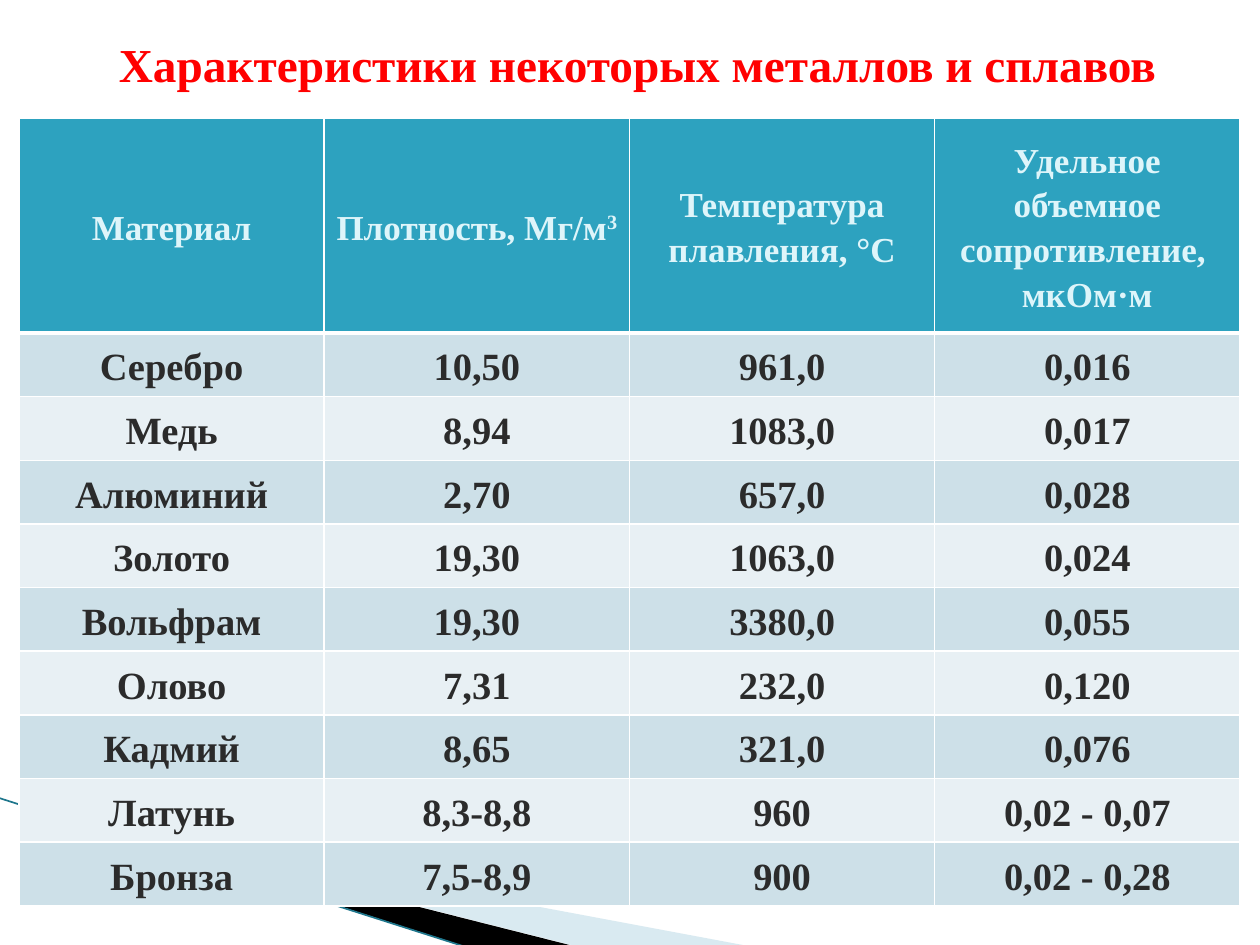
"""Build a slide with a table of the properties of some metals and alloys."""
from lxml.etree import SubElement
from pptx import Presentation
from pptx.dml.color import RGBColor
from pptx.enum.shapes import MSO_CONNECTOR
from pptx.enum.text import MSO_ANCHOR, PP_ALIGN
from pptx.oxml.ns import qn
from pptx.util import Emu, Pt

PX = 914400 / 126
FONT = "Times New Roman"
COLORS = {
    "title": "FF0000", "header": "2DA2BF", "header_text": "DEF5FA",
    "odd": "CDE0E8", "even": "E8F0F4", "text": "2B2B2B",
    "border": "FFFFFF", "pale": "A0CBDC", "dark": "000000", "edge": "1E768C",
}
TITLE = "Характеристики некоторых металлов и сплавов"
HEADERS = [
    "Материал",
    "Плотность, Мг/м",
    "Температура\vплавления, °C",
    "Удельное объемное\vсопротивление, \nмкОм·м",
]
DENSITY_COLUMN, DENSITY_POWER = 1, "3"
MATERIALS = [
    ("Серебро", "10,50", "961,0", "0,016"),
    ("Медь", "8,94", "1083,0", "0,017"),
    ("Алюминий", "2,70", "657,0", "0,028"),
    ("Золото", "19,30", "1063,0", "0,024"),
    ("Вольфрам", "19,30", "3380,0", "0,055"),
    ("Олово", "7,31", "232,0", "0,120"),
    ("Кадмий", "8,65", "321,0", "0,076"),
    ("Латунь", "8,3-8,8", "960", "0,02 - 0,07"),
    ("Бронза", "7,5-8,9", "900", "0,02 - 0,28"),
]
WEDGES = [
    ("pale", 40, (98, 689, 524, 199), [(69, 819), (748, 946), (575, 946), (69, 818)]),
    ("dark", 100, (-8, 798, 524, 116), [(67, 818), (573, 946), (470, 948), (68, 819)]),
]
EDGE = (-1, 798, 469, 948)
TITLE_BOX = (20, 29, 1220, 886)
TABLE_BOX = (19, 118, 1221, 788)
HEADER_HEIGHT = 215


def px(value):
    return Emu(round(value * PX))


def rgb(name):
    return RGBColor.from_string(COLORS[name])


def style_font(font, size, color):
    font.name, font.size, font.bold = FONT, Pt(size), True
    font.color.rgb = rgb(color)


def set_frame(wedge, frame):
    left, top, width, height = map(px, frame)
    shift_x, shift_y = wedge.left - left, wedge.top - top
    for outline in wedge._element.iter(qn("a:path")):
        outline.set("w", str(width))
        outline.set("h", str(height))
        for point in outline.iter(qn("a:pt")):
            point.set("x", str(int(point.get("x")) + shift_x))
            point.set("y", str(int(point.get("y")) + shift_y))
    wedge.left, wedge.top, wedge.width, wedge.height = left, top, width, height


def add_wedge(slide, color, opacity, frame, points):
    corners = [(px(x), px(y)) for x, y in points]
    builder = slide.shapes.build_freeform(*corners[0])
    builder.add_line_segments(corners[1:], close=True)
    wedge = builder.convert_to_shape()
    set_frame(wedge, frame)
    wedge.shadow.inherit = False
    wedge.fill.solid()
    wedge.fill.fore_color.rgb = rgb(color)
    wedge.line.fill.background()
    if opacity < 100:
        tint = wedge.fill._xPr.find(f"{qn('a:solidFill')}/{qn('a:srgbClr')}")
        SubElement(tint, qn("a:alpha"), val=str(opacity * 1000))


def add_edge(slide):
    edge = slide.shapes.add_connector(MSO_CONNECTOR.STRAIGHT, *map(px, EDGE))
    edge.line.color.rgb = rgb("edge")
    edge.line.width = Pt(0.95)
    SubElement(edge._element.spPr, qn("a:effectLst"))


def add_title(slide):
    frame = slide.shapes.add_textbox(*map(px, TITLE_BOX)).text_frame
    frame.word_wrap = True
    frame.margin_top = px(6)
    frame.text = TITLE
    heading = frame.paragraphs[0]
    heading.alignment = PP_ALIGN.CENTER
    properties = heading._p.get_or_add_pPr()
    properties.set("marL", str(px(50)))
    properties.set("indent", str(px(-35)))
    style_font(heading.runs[0].font, 27, "title")


def set_borders(cell, widths):
    for side, width in widths.items():
        border = SubElement(cell._tc.get_or_add_tcPr(), qn(f"a:ln{side}"), w=str(Pt(width)))
        SubElement(SubElement(border, qn("a:solidFill")), qn("a:srgbClr"), val=COLORS["border"])


def fill_cell(cell, text, row):
    is_header = row == 0
    set_borders(cell, {"L": 1, "R": 1, "T": 3 if row == 1 else 1, "B": 3 if is_header else 1})
    cell.fill.solid()
    cell.fill.fore_color.rgb = rgb("header" if is_header else "odd" if row % 2 else "even")
    cell.vertical_anchor = MSO_ANCHOR.MIDDLE
    cell.margin_left = cell.margin_right = cell.margin_top = cell.margin_bottom = px(2)
    cell.text_frame.text = text
    lines = cell.text_frame.paragraphs
    for line in lines:
        line.alignment = PP_ALIGN.CENTER
        line.line_spacing = 1.15
        line.space_after = Pt(10 if len(lines) == 1 else 0)
        for run in line.runs:
            style_font(run.font, 20 if is_header else 22, "header_text" if is_header else "text")


def add_materials(slide):
    rows = [HEADERS, *MATERIALS]
    table = slide.shapes.add_table(len(rows), len(HEADERS), *map(px, TABLE_BOX)).table
    body_height = (TABLE_BOX[3] - HEADER_HEIGHT) / len(MATERIALS)
    for column in table.columns:
        column.width = px(TABLE_BOX[2] / len(HEADERS))
    for r, values in enumerate(rows):
        table.rows[r].height = px(body_height if r else HEADER_HEIGHT)
        for c, value in enumerate(values):
            fill_cell(table.cell(r, c), value, r)
    power = table.cell(0, DENSITY_COLUMN).text_frame.paragraphs[0].add_run()
    power.text = DENSITY_POWER
    style_font(power.font, 20, "header_text")
    power.font._element.set("baseline", "30000")


def main():
    deck = Presentation()
    deck.slide_width, deck.slide_height = px(1260), px(945)
    slide = deck.slides.add_slide(deck.slide_layouts[6])
    for wedge in WEDGES:
        add_wedge(slide, *wedge)
    add_edge(slide)
    add_title(slide)
    add_materials(slide)
    deck.save("out.pptx")


if __name__ == "__main__":
    main()
